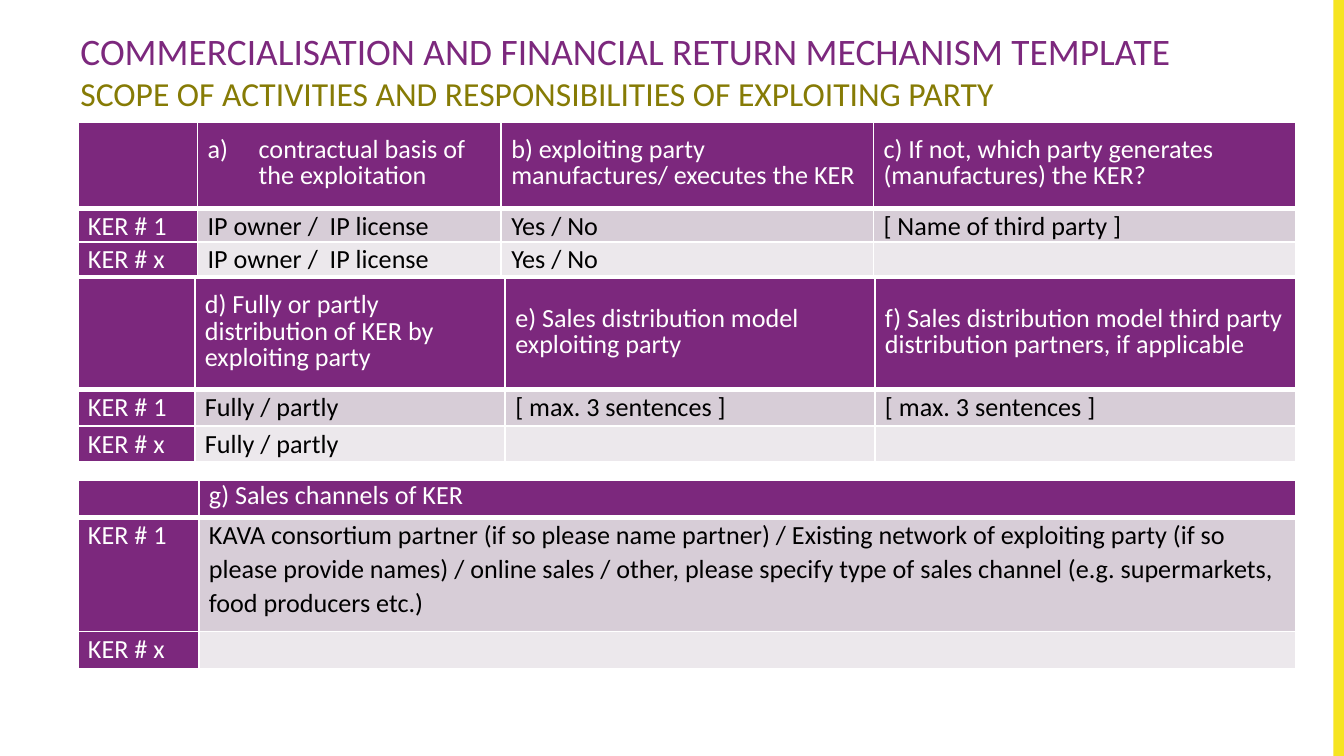
from lxml import etree
from pptx import Presentation
from pptx.dml.color import RGBColor
from pptx.enum.shapes import MSO_SHAPE
from pptx.enum.text import MSO_ANCHOR
from pptx.oxml.ns import qn
from pptx.util import Inches, Pt

RECT = MSO_SHAPE.RECTANGLE
TOP, MIDDLE = MSO_ANCHOR.TOP, MSO_ANCHOR.MIDDLE
PURPLE, OLIVE, YELLOW = "7C287D", "867B05", "F6E421"
WHITE, BLACK = "FFFFFF", "000000"
BANDS = ["D7CDD7", "ECE8EC"]
WIDTH, HEIGHT = Inches(10), Inches(10) * 9 // 16
LEFT = 0.58

TITLE = [
    ("COMMERCIALISATION AND FINANCIAL RETURN MECHANISM TEMPLATE", 20, PURPLE),
    ("SCOPE OF ACTIVITIES AND RESPONSIBILITIES OF EXPLOITING PARTY", 18, OLIVE),
]
TABLES = [
    {"top": 0.91, "cols": [0.89, 2.26, 2.77, 3.14], "rows": [0.64, 0.21, 0.21],
     "auto": True,
     "text": [
         ["", "contractual basis of the exploitation",
          "b) exploiting party manufactures/ executes the KER",
          "c) If not, which party generates (manufactures) the KER?"],
         ["KER # 1", "IP owner /  IP license", "Yes / No", "[ Name of third party ]"],
         ["KER # x", "IP owner /  IP license", "Yes / No", ""]]},
    {"top": 2.07, "cols": [0.87, 2.31, 2.75, 3.13], "rows": [0.83, 0.27, 0.27],
     "text": [
         ["", "d) Fully or partly distribution of KER by exploiting party",
          "e) Sales distribution model exploiting party",
          "f) Sales distribution model third party distribution partners, if applicable"],
         ["KER # 1", "Fully / partly", "[ max. 3 sentences ]", "[ max. 3 sentences ]"],
         ["KER # x", "Fully / partly", "", ""]]},
    {"top": 3.57, "cols": [0.9, 8.16], "rows": [0.28, 0.85, 0.28],
     "text": [
         ["", "g) Sales channels of KER"],
         ["KER # 1",
          "KAVA consortium partner (if so please name partner) / Existing network of "
          "exploiting party (if so please provide names) / online sales / other, please "
          "specify type of sales channel (e.g. supermarkets, food producers etc.)"],
         ["KER # x", ""]]},
]


def color(code):
    """Turn a hex string into a colour."""
    return RGBColor.from_string(code)


def apply(item, values):
    """Set each named attribute of an item."""
    for name, value in values.items():
        setattr(item, name, value)


def add_run(para, text, size, code):
    """Add one formatted run to a paragraph."""
    run = para.add_run()
    run.text = text
    apply(run.font, {"name": "Calibri", "size": Pt(size), "bold": False})
    run.font.color.rgb = color(code)


def add_bar(slide):
    """Draw the yellow bar on the right edge."""
    bar = slide.shapes.add_shape(RECT, Inches(9.92), 0, Inches(0.08), HEIGHT)
    bar.shadow.inherit = False
    bar.fill.solid()
    bar.fill.fore_color.rgb = color(YELLOW)
    bar.line.fill.background()


def add_title(slide):
    """Write the two title lines."""
    box = slide.shapes.add_textbox(Inches(0.5), Inches(0.21), Inches(9.22), Inches(0.66))
    frame = box.text_frame
    apply(frame, {"word_wrap": True, "margin_top": 0, "margin_bottom": 0,
                  "vertical_anchor": TOP})
    for i, (text, size, code) in enumerate(TITLE):
        para = frame.add_paragraph() if i else frame.paragraphs[0]
        add_run(para, text, size, code)


def add_edges(cell, row):
    """Give a cell white borders, thick under the header."""
    props = cell._tc.get_or_add_tcPr()
    widths = {"lnL": 1, "lnR": 1, "lnT": 3 if row == 1 else 1, "lnB": 1 if row else 3}
    for tag, width in widths.items():
        line = etree.SubElement(props, qn(f"a:{tag}"), w=str(Pt(width)))
        fill = etree.SubElement(line, qn("a:solidFill"))
        etree.SubElement(fill, qn("a:srgbClr"), val=WHITE)


def add_letter(para):
    """Number a paragraph with a hanging letter."""
    props = para._p.get_or_add_pPr()
    props.set("marL", str(Inches(0.38)))
    props.set("indent", str(Inches(-0.38)))
    etree.SubElement(props, qn("a:buAutoNum"), type="alphaLcParenR")


def fill_cell(cell, text, row, col, auto):
    """Format one cell and write its text."""
    head, dark = row == 0, row == 0 or col == 0
    apply(cell, {"margin_left": Pt(5.4), "margin_right": Pt(5.4),
                 "margin_top": 0, "margin_bottom": 0,
                 "vertical_anchor": MIDDLE if head else TOP})
    add_edges(cell, row)
    cell.fill.solid()
    cell.fill.fore_color.rgb = color(PURPLE if dark else BANDS[row - 1])
    para = cell.text_frame.paragraphs[0]
    apply(para, {"line_spacing": Pt(14.2) if head else 1.07,
                 "space_after": Pt(0 if head else 8)})
    if auto and head and col == 1:
        add_letter(para)
    if text:
        add_run(para, text, 14, WHITE if dark else BLACK)
    else:
        para._p.get_or_add_endParaRPr().set("sz", "1400")


def add_grid(slide, top, cols, rows, text, auto=False):
    """Build one table from its sizes and texts."""
    table = slide.shapes.add_table(
        len(rows), len(cols), Inches(LEFT), Inches(top),
        Inches(sum(cols)), Inches(sum(rows))).table
    apply(table, {"first_row": False, "horz_banding": False})
    for col, width in zip(table.columns, cols):
        col.width = Inches(width)
    for row, height in zip(table.rows, rows):
        row.height = Inches(height)
    for r, line in enumerate(text):
        for c, words in enumerate(line):
            fill_cell(table.cell(r, c), words, r, c, auto)


def main():
    """Build and save the slide."""
    deck = Presentation()
    apply(deck, {"slide_width": WIDTH, "slide_height": HEIGHT})
    slide = deck.slides.add_slide(deck.slide_layouts[6])
    add_bar(slide)
    add_title(slide)
    for grid in TABLES:
        add_grid(slide, **grid)
    deck.save("out.pptx")


if __name__ == "__main__":
    main()
